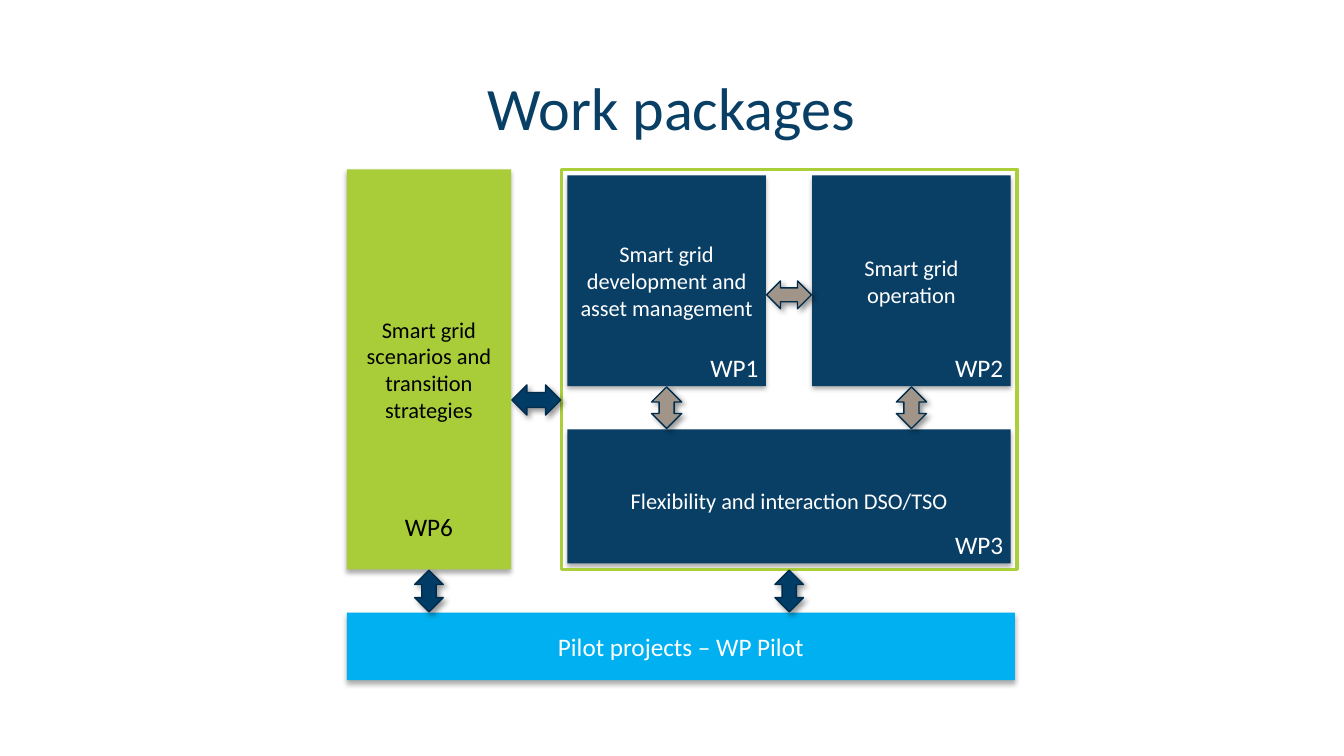
from dataclasses import dataclass

from lxml.etree import SubElement
from pptx import Presentation
from pptx.dml.color import RGBColor
from pptx.enum.shapes import MSO_SHAPE as SHAPE
from pptx.enum.text import MSO_ANCHOR as ANCHOR, PP_ALIGN as ALIGN
from pptx.oxml.ns import qn
from pptx.util import Cm, Pt


@dataclass(frozen=True)
class Theme:
    font: str = "Calibri"
    title_size: int = 43
    label_size: int = 18
    body_size: int = 16
    navy: str = "093F65"
    green: str = "A9CD39"
    frame: str = "AACF38"
    blue: str = "00B0F0"
    dark: str = "003C65"
    taupe: str = "A19589"
    outline: str = "002C4B"
    white: str = "FFFFFF"
    black: str = "000000"
    box_shadow: tuple = (32, 3.5, 2.2, 90)
    arrow_shadow: tuple = (40, 4, 3, 45)


T = Theme()
TITLE = ("Work packages", (4.42, 1.4, 25, 2.57))

AREAS = {
    "WP2": (20.47, 4.42, 5, 5.31),
    "WP1": (14.3, 4.42, 5, 5.31),
    "WP3": (14.3, 10.82, 11.17, 3.38),
    "WP6": (8.74, 4.27, 4.14, 10.08),
    "Pilot": (8.74, 15.44, 16.84, 1.7),
    "Frame": (14.15, 4.27, 11.48, 10.08),
}
BOXES = [
    ("WP2", "Smart grid operation", T.navy, T.white, T.body_size),
    ("WP1", "Smart grid development and asset management", T.navy, T.white, T.body_size),
    ("WP3", "Flexibility and interaction DSO/TSO", T.navy, T.white, T.body_size),
    ("WP6", "Smart grid scenarios and transition strategies", T.green, T.black, T.body_size),
    ("Pilot", "Pilot projects – WP Pilot", T.blue, T.white, T.label_size),
]
EXTRA_TOP = {"WP3": 0.18}
CORNER_LABELS = ["WP1", "WP2", "WP3"]
CENTRED_LABEL = "WP6"
LABEL_W, LABEL_H = 1.78, 1.02

VERTICAL_ARROWS = [
    ("WP6", "Pilot", 0.72, T.dark),
    ("Frame", "Pilot", 0.72, T.dark),
    ("WP1", "WP3", 0.76, T.taupe),
    ("WP2", "WP3", 0.76, T.taupe),
]
HORIZONTAL_ARROWS = [
    ("WP6", "Frame", 10.08, 0.76, T.dark),
    ("WP1", "WP2", 7.43, 0.7, T.taupe),
]
ARROW_MARGIN = 0.02

prs = Presentation()
prs.slide_width, prs.slide_height = Cm(33.87), Cm(19.05)
s = prs.slides.add_slide(prs.slide_layouts[6])


def rgb(color):
    return RGBColor.from_string(color)


def write(sp, text, size, color, align=ALIGN.CENTER, anchor=ANCHOR.MIDDLE, wrap=True):
    tf = sp.text_frame
    tf.word_wrap = wrap
    tf.vertical_anchor = anchor
    p = tf.paragraphs[0]
    p.text = text
    p.alignment = align
    r = p.runs[0]
    r.font.name, r.font.size = T.font, Pt(size)
    r.font.color.rgb = rgb(color)


def add_text(text, area, size, color, **layout):
    sp = s.shapes.add_textbox(*map(Cm, area))
    write(sp, text, size, color, **layout)


def add_shadow(sp, opacity, blur, distance, angle):
    effects = sp._element.spPr.find(qn("a:effectLst"))
    shadow = SubElement(effects, qn("a:outerShdw"), blurRad=str(Pt(blur)),
                        dist=str(Pt(distance)), dir=str(angle * 60000),
                        rotWithShape="0")
    color = SubElement(shadow, qn("a:srgbClr"), val=T.black)
    SubElement(color, qn("a:alpha"), val=str(opacity * 1000))


def add_shape(kind, area, fill=None, line=None, width=1, shadow=None):
    sp = s.shapes.add_shape(kind, *map(Cm, area))
    sp.shadow.inherit = False
    if fill:
        sp.fill.solid()
        sp.fill.fore_color.rgb = rgb(fill)
    else:
        sp.fill.background()
    if line:
        sp.line.color.rgb = rgb(line)
        sp.line.width = Pt(width)
    else:
        sp.line.fill.background()
    if shadow:
        add_shadow(sp, *shadow)
    return sp


def add_arrow(kind, area, fill):
    add_shape(kind, area, fill, T.outline, shadow=T.arrow_shadow)


add_text(*TITLE, T.title_size, T.navy)

for name, text, fill, color, size in BOXES:
    sp = add_shape(SHAPE.RECTANGLE, AREAS[name], fill, shadow=T.box_shadow)
    write(sp, text, size, color)
    sp.text_frame.margin_top += Cm(EXTRA_TOP.get(name, 0))

for name in CORNER_LABELS:
    x, y, w, h = AREAS[name]
    area = (x + w - LABEL_W + 0.13, y + h - LABEL_H + 0.04, LABEL_W, LABEL_H)
    add_text(name, area, T.label_size, T.white,
             align=ALIGN.LEFT, anchor=ANCHOR.TOP, wrap=False)

x, y, w, h = AREAS[CENTRED_LABEL]
add_text(CENTRED_LABEL, (x + (w - LABEL_W) / 2, y + h - 1.6, LABEL_W, LABEL_H),
         T.label_size, T.black, anchor=ANCHOR.TOP, wrap=False)

add_shape(SHAPE.RECTANGLE, AREAS["Frame"], line=T.frame, width=2.25)

for upper, lower, breadth, fill in VERTICAL_ARROWS:
    x, y, w, h = AREAS[upper]
    top = y + h + ARROW_MARGIN
    length = AREAS[lower][1] - ARROW_MARGIN - top
    add_arrow(SHAPE.UP_DOWN_ARROW, (x + (w - breadth) / 2, top, breadth, length), fill)

for first, second, middle, breadth, fill in HORIZONTAL_ARROWS:
    x, y, w, h = AREAS[first]
    left = x + w + ARROW_MARGIN
    length = AREAS[second][0] - ARROW_MARGIN - left
    add_arrow(SHAPE.LEFT_RIGHT_ARROW, (left, middle - breadth / 2, length, breadth), fill)

prs.save("out.pptx")
